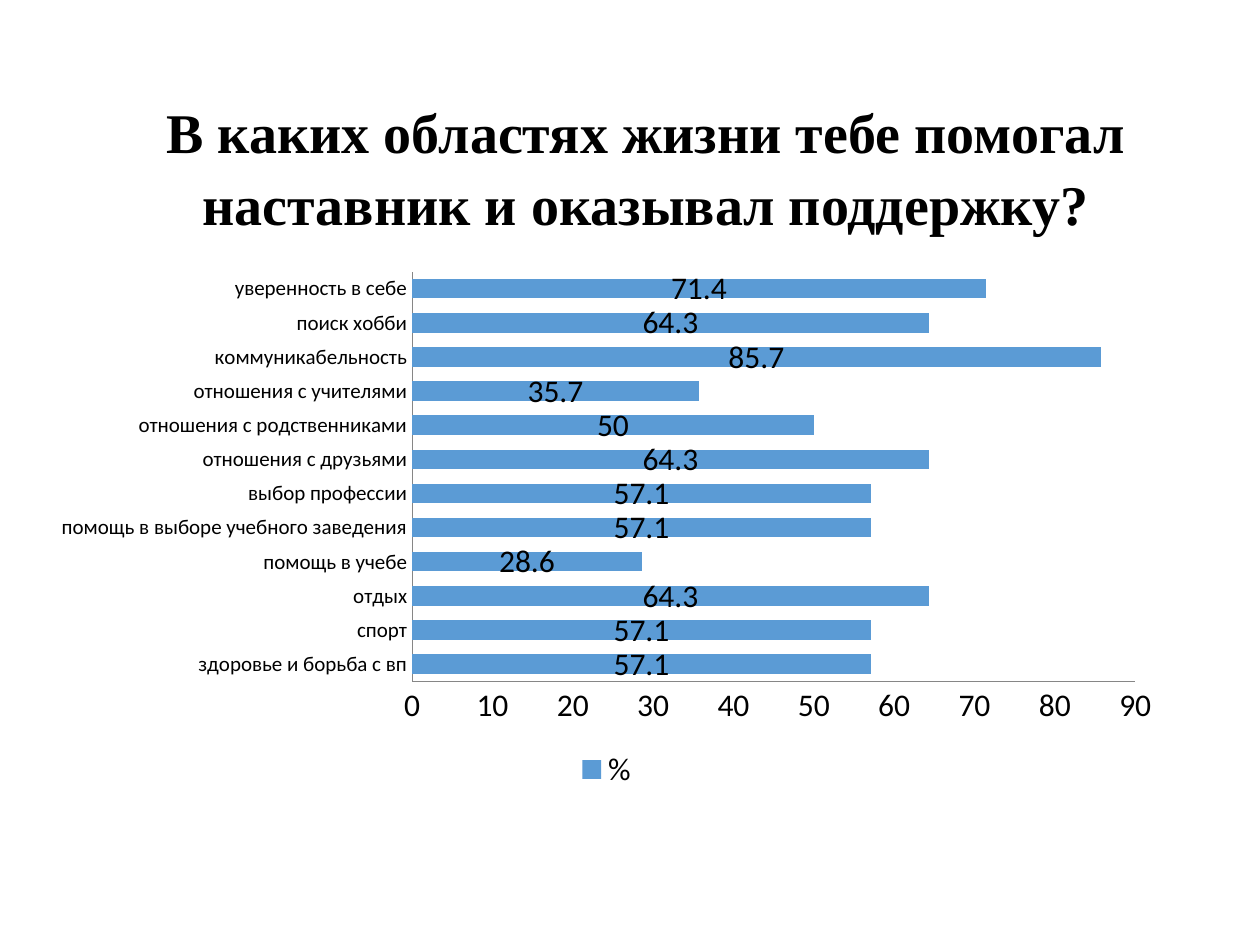
"""Build a slide with a bar chart of the areas of life where a mentor helped."""
from pptx import Presentation
from pptx.chart.data import CategoryChartData
from pptx.dml.color import RGBColor
from pptx.enum.chart import XL_CHART_TYPE as ChartType, XL_LABEL_POSITION as LabelPosition
from pptx.enum.chart import XL_LEGEND_POSITION as LegendPosition, XL_TICK_MARK as TickMark
from pptx.enum.text import PP_ALIGN as Align
from pptx.util import Emu, Pt

TITLE = "В каких областях жизни тебе помогал наставник и оказывал поддержку?"
SERIES = "%"
AREAS = [
    ("здоровье и борьба с вп", 57.1),
    ("спорт", 57.1),
    ("отдых", 64.3),
    ("помощь в учебе", 28.6),
    ("помощь в выборе учебного заведения", 57.1),
    ("выбор профессии", 57.1),
    ("отношения с друзьями", 64.3),
    ("отношения с родственниками", 50),
    ("отношения с учителями", 35.7),
    ("коммуникабельность", 85.7),
    ("поиск хобби", 64.3),
    ("уверенность в себе", 71.4),
]
COLORS = {"text": "000000", "bar": "5B9BD5", "axis": "868686", "background": "FFFFFF"}
SLIDE_SIZE = (1260, 945)
TITLE_BOX = (83, 87, 1126, 149)
CHART_BOX = (39, 261, 1135, 534)


def px(*lengths):
    return [Emu(round(length * 914400 / 126)) for length in lengths]


def color(name):
    return RGBColor.from_string(COLORS[name])


def format_font(font, size, name="Calibri", bold=False):
    font.name = name
    font.size = Pt(size)
    font.bold = bold
    font.color.rgb = color("text")


def add_text(slide, text, box, size, name, bold=False, align=Align.LEFT, spacing=1.0):
    frame = slide.shapes.add_textbox(*px(*box)).text_frame
    frame.word_wrap = True
    paragraph = frame.paragraphs[0]
    paragraph.alignment = align
    paragraph.line_spacing = spacing
    run = paragraph.add_run()
    run.text = text
    format_font(run.font, size, name, bold)


def format_axis(axis, size):
    axis.has_major_gridlines = False
    axis.major_tick_mark = axis.minor_tick_mark = TickMark.NONE
    axis.format.line.color.rgb = color("axis")
    axis.format.line.width = Pt(0.75)
    format_font(axis.tick_labels.font, size)


def add_bar_chart(slide):
    data = CategoryChartData()
    data.categories = [area for area, _ in AREAS]
    data.add_series(SERIES, [share for _, share in AREAS])
    chart = slide.shapes.add_chart(ChartType.BAR_STACKED, *px(*CHART_BOX), data).chart
    format_font(chart.font, 18)
    chart.has_title = False
    chart.has_legend = True
    chart.legend.position = LegendPosition.BOTTOM
    chart.legend.include_in_layout = False
    format_font(chart.legend.font, 18)
    format_axis(chart.category_axis, 12)
    format_axis(chart.value_axis, 18)
    chart.value_axis.minimum_scale = 0
    chart.value_axis.maximum_scale = 90
    chart.value_axis.major_unit = 10

    plot = chart.plots[0]
    plot.gap_width = 75
    plot.overlap = 100
    plot.vary_by_categories = False
    plot.has_data_labels = True
    plot.data_labels.show_value = True
    plot.data_labels.position = LabelPosition.CENTER
    format_font(plot.data_labels.font, 18)
    fill = plot.series[0].format.fill
    fill.solid()
    fill.fore_color.rgb = color("bar")


def main():
    presentation = Presentation()
    presentation.slide_width, presentation.slide_height = px(*SLIDE_SIZE)
    slide = presentation.slides.add_slide(presentation.slide_layouts[6])
    slide.background.fill.solid()
    slide.background.fill.fore_color.rgb = color("background")
    add_text(slide, TITLE, TITLE_BOX, size=32, name="Times New Roman", bold=True,
             align=Align.CENTER, spacing=1.07)
    add_bar_chart(slide)
    presentation.save("out.pptx")


if __name__ == "__main__":
    main()
